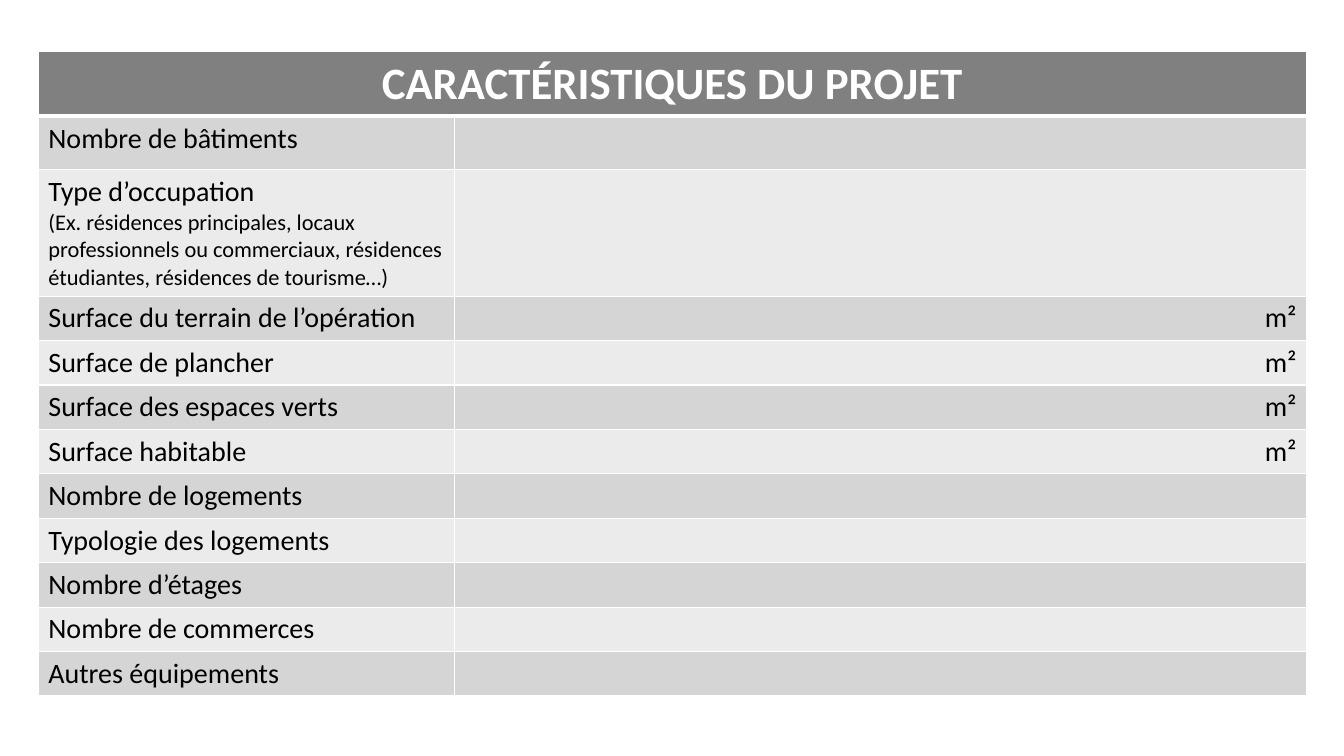
"""Build the project characteristics form as a one-table slide."""
from lxml.etree import SubElement
from pptx import Presentation
from pptx.dml.color import RGBColor
from pptx.enum.text import PP_ALIGN as Align
from pptx.oxml.ns import qn
from pptx.util import Inches, Pt

WHITE, BLACK, HEADER = "FFFFFF", "000000", "808080"
BANDS = ["D5D5D5", "EBEBEB"]
LABELS = [
    "Nombre de bâtiments", "Type d’occupation", "Surface du terrain de l’opération",
    "Surface de plancher", "Surface des espaces verts", "Surface habitable",
    "Nombre de logements", "Typologie des logements", "Nombre d’étages",
    "Nombre de commerces", "Autres équipements",
]
EXAMPLES = ("(Ex. résidences principales, locaux professionnels ou commerciaux, "
            "résidences étudiantes, résidences de tourisme…)")
COLS = [4.13, 8.45]
ROWS = [0.62, 0.53, 1.24] + [0.44] * 9


def style_cell(cell, fill, bottom=1):
    """Give a cell white borders and a solid fill."""
    tc_pr = cell._tc.get_or_add_tcPr()
    for side, width in zip("LRTB", (1, 1, 1, bottom)):
        ln = SubElement(tc_pr, qn(f"a:ln{side}"), w=str(Pt(width)))
        SubElement(SubElement(ln, qn("a:solidFill")), qn("a:srgbClr"), val=WHITE)
    cell.fill.solid()
    cell.fill.fore_color.rgb = RGBColor.from_string(fill)


def write(p, text, size=20, color=BLACK, bold=False, align=Align.LEFT):
    """Fill a paragraph with text in one format."""
    p.text = text
    p.alignment = align
    font = p.runs[0].font
    font.name, font.size, font.bold = "Calibri", Pt(size), bold
    font.color.rgb = RGBColor.from_string(color)


prs = Presentation()
prs.slide_width, prs.slide_height = Inches(13.33), Inches(7.5)
s = prs.slides.add_slide(prs.slide_layouts[6])
table = s.shapes.add_table(len(ROWS), len(COLS), Inches(0.38), Inches(0.51),
                           Inches(sum(COLS)), Inches(sum(ROWS))).table
table.first_row = table.horz_banding = False
for col, width in zip(table.columns, COLS):
    col.width = Inches(width)
for row, height in zip(table.rows, ROWS):
    row.height = Inches(height)

title = table.cell(0, 0)
title.merge(table.cell(0, 1))
for cell in table.rows[0].cells:
    style_cell(cell, HEADER, bottom=3)
write(title.text_frame.paragraphs[0], "CARACTÉRISTIQUES DU PROJET",
      32, WHITE, True, Align.CENTER)

for i, label in enumerate(LABELS, 1):
    name, value = table.cell(i, 0), table.cell(i, 1)
    for cell in (name, value):
        style_cell(cell, BANDS[(i - 1) % 2])
    write(name.text_frame.paragraphs[0], label)
    if label.startswith("Type "):
        write(name.text_frame.add_paragraph(), EXAMPLES, 16)
    if label.startswith("Surface"):
        write(value.text_frame.paragraphs[0], "m²", align=Align.RIGHT)

prs.save("out.pptx")
